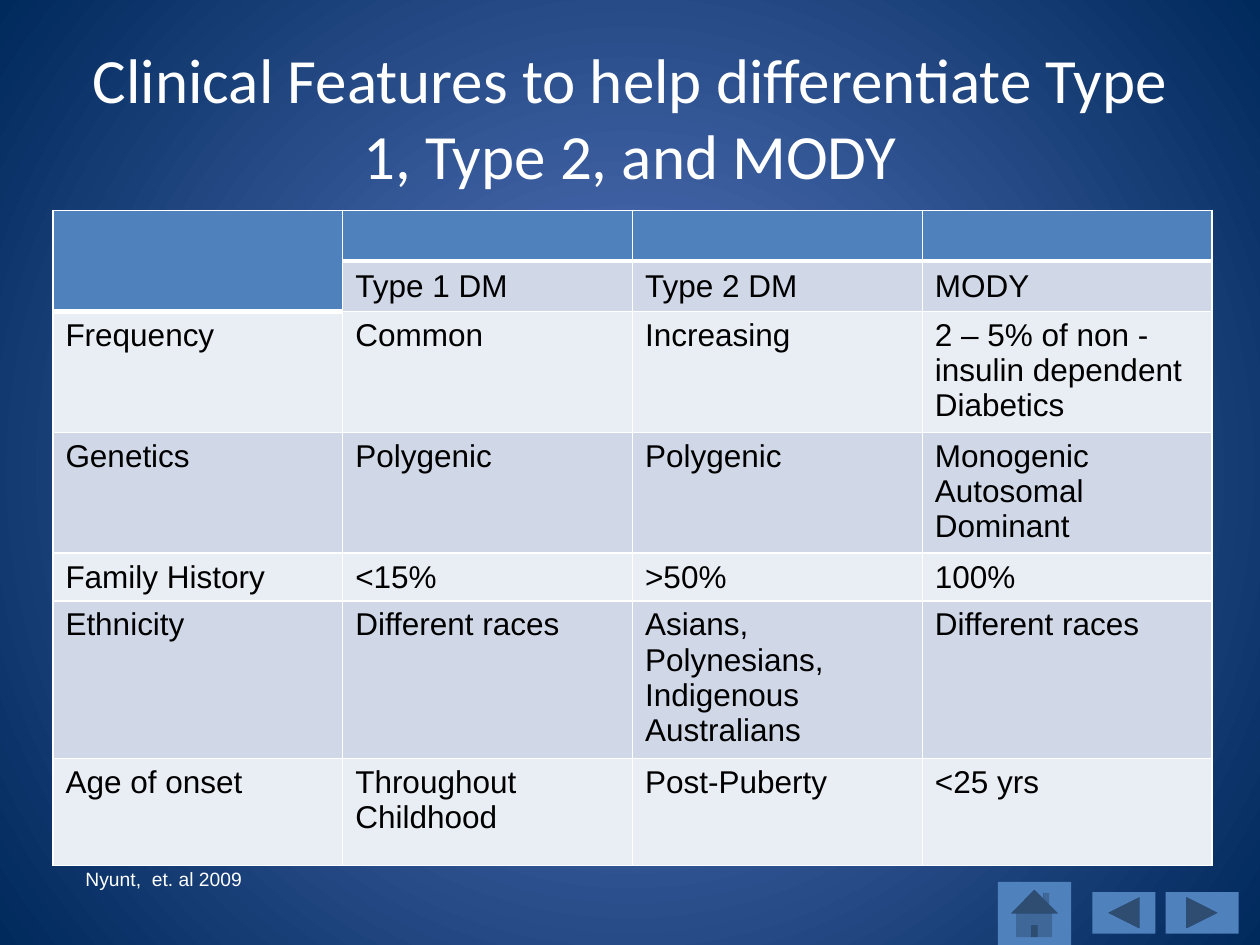
from dataclasses import dataclass

from lxml import etree
from pptx import Presentation
from pptx.dml.color import RGBColor
from pptx.enum.shapes import MSO_SHAPE
from pptx.enum.text import MSO_ANCHOR, PP_ALIGN
from pptx.oxml.ns import qn
from pptx.util import Inches, Pt

BACK = MSO_SHAPE.ACTION_BUTTON_BACK_OR_PREVIOUS
FORWARD = MSO_SHAPE.ACTION_BUTTON_FORWARD_OR_NEXT
HOME = MSO_SHAPE.ACTION_BUTTON_HOME
MIDDLE, TOP = MSO_ANCHOR.MIDDLE, MSO_ANCHOR.TOP
LEFT, CENTER = PP_ALIGN.LEFT, PP_ALIGN.CENTER

TITLE = "Clinical Features to help differentiate Type 1, Type 2, and MODY"
CITATION = "Nyunt,  et. al 2009"
FEATURES = [
    ("", "", "", ""),
    ("", "Type 1 DM", "Type 2 DM", "MODY"),
    ("Frequency", "Common", "Increasing", "2 – 5% of non - insulin dependent Diabetics"),
    ("Genetics", "Polygenic", "Polygenic", "Monogenic Autosomal Dominant"),
    ("Family History", "<15%", ">50%", "100%"),
    ("Ethnicity", "Different races", "Asians, Polynesians, Indigenous Australians",
     "Different races"),
    ("Age of onset", "Throughout Childhood", "Post-Puberty", "<25 yrs"),
]
ROW_HEIGHTS = [0.4, 0.4, 0.96, 0.96, 0.38, 1.22, 0.85]
COLUMN_WIDTH = 2.3
NAVIGATION = [
    (BACK, (8.67, 7.08, 0.5, 0.33)),
    (FORWARD, (9.25, 7.08, 0.58, 0.33)),
    (HOME, (7.92, 7, 0.58, 0.5)),
]


@dataclass(frozen=True)
class Theme:
    glow: str = "5E7CC5"
    navy: str = "00295C"
    accent: str = "4F81BD"
    bands: tuple = ("E9EDF4", "D0D8E8")
    light: str = "FFFFFF"
    dark: str = "000000"
    title_font: str = "Calibri"
    body_font: str = "Arial"
    title_size: int = 36
    body_size: int = 18
    citation_size: int = 11
    rule: int = 1
    header_rule: int = 3


THEME = Theme()


def rgb(color):
    return RGBColor.from_string(color)


def set_default_font(deck):
    for element in (deck.element, deck.slide_master.element):
        for style in ("p:defaultTextStyle", "p:otherStyle"):
            for block in element.iter(qn(style)):
                for latin in block.iter(qn("a:latin")):
                    latin.set("typeface", THEME.body_font)


def paint_background(slide):
    fill = slide.background.fill
    fill.gradient()
    for stop, color, position in zip(fill.gradient_stops, (THEME.glow, THEME.navy), (0, 1)):
        stop.color.rgb = rgb(color)
        stop.position = position
    gradient = slide.element.find(".//" + qn("a:gradFill"))
    linear = gradient.find(qn("a:lin"))
    radial = etree.Element(qn("a:path"), {"path": "circle"})
    etree.SubElement(radial, qn("a:fillToRect"), dict.fromkeys("ltrb", "50000"))
    gradient.replace(linear, radial)


def write(frame, text, font, size, color, align=LEFT):
    paragraph = frame.paragraphs[0]
    paragraph.alignment = align
    paragraph.font.size = Pt(size)
    paragraph.font.name = font
    if text:
        run = paragraph.add_run()
        run.text = text
        run.font.name = font
        run.font.size = Pt(size)
        run.font.color.rgb = rgb(color)


def add_text(slide, box, anchor, *style):
    frame = slide.shapes.add_textbox(*map(Inches, box)).text_frame
    frame.word_wrap = True
    frame.vertical_anchor = anchor
    write(frame, *style)


def add_navigation(slide):
    for button, box in NAVIGATION:
        shape = slide.shapes.add_shape(button, *map(Inches, box))
        shape.shadow.inherit = False
        shape.fill.solid()
        shape.fill.fore_color.rgb = rgb(THEME.accent)
        shape.line.fill.background()


def set_borders(cell, row, column):
    header_end = 1 if column == 0 else 0
    top = THEME.header_rule if row == header_end + 1 else THEME.rule
    bottom = THEME.header_rule if row <= header_end else THEME.rule
    properties = cell._tc.get_or_add_tcPr()
    for side, width in (("L", THEME.rule), ("R", THEME.rule), ("T", top), ("B", bottom)):
        line = etree.SubElement(properties, qn(f"a:ln{side}"), {"w": str(Pt(width))})
        solid = etree.SubElement(line, qn("a:solidFill"))
        etree.SubElement(solid, qn("a:srgbClr"), {"val": THEME.light})


def add_features(slide):
    columns = len(FEATURES[0])
    box = (0.42, 1.67, COLUMN_WIDTH * columns, sum(ROW_HEIGHTS))
    table = slide.shapes.add_table(len(FEATURES), columns, *map(Inches, box)).table
    for column in table.columns:
        column.width = Inches(COLUMN_WIDTH)
    for row, height in zip(table.rows, ROW_HEIGHTS):
        row.height = Inches(height)
    for r, values in enumerate(FEATURES):
        for c, text in enumerate(values):
            cell = table.cell(r, c)
            set_borders(cell, r, c)
            is_header = r == 0 or (r == 1 and c == 0)
            cell.fill.solid()
            cell.fill.fore_color.rgb = rgb(THEME.accent if is_header else THEME.bands[r % 2])
            cell.vertical_anchor = MIDDLE if r == 1 else TOP
            if r > 1:
                cell.margin_bottom = 0
            write(cell.text_frame, text, THEME.body_font, THEME.body_size, THEME.dark)
    table.cell(0, 0).merge(table.cell(1, 0))


def main():
    deck = Presentation()
    deck.slide_width, deck.slide_height = Inches(10), Inches(7.5)
    set_default_font(deck)
    slide = deck.slides.add_slide(deck.slide_layouts[6])
    paint_background(slide)
    add_navigation(slide)
    add_text(slide, (0.5, 0.3, 9, 1.25), MIDDLE, TITLE,
             THEME.title_font, THEME.title_size, THEME.light, CENTER)
    add_features(slide)
    add_text(slide, (0.58, 6.83, 2.5, 0.29), TOP, CITATION,
             THEME.body_font, THEME.citation_size, THEME.light)
    deck.save("out.pptx")


if __name__ == "__main__":
    main()
